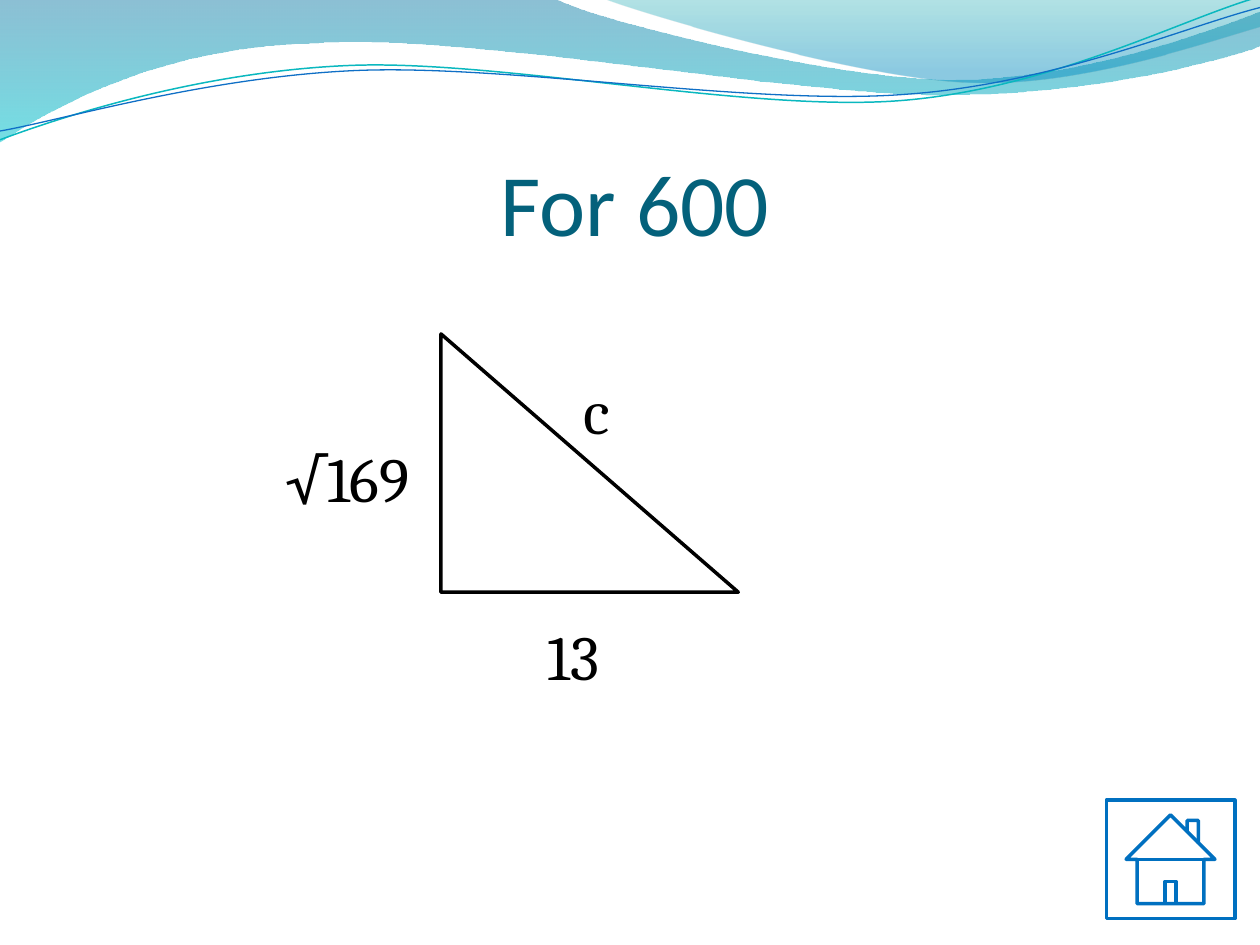
from dataclasses import dataclass
from math import cos, radians, sin

from pptx import Presentation
from pptx.dml.color import RGBColor
from pptx.enum.shapes import MSO_SHAPE as Preset
from pptx.enum.text import MSO_ANCHOR as Anchor, MSO_AUTO_SIZE as AutoSize, PP_ALIGN as Align
from pptx.oxml.ns import qn
from pptx.oxml.xmlchemy import OxmlElement
from pptx.util import Inches, Pt

UNITS_PER_INCH = 10000
STRAND_TILT = 2.7

Point = tuple[float, float]
Segment = tuple[float, ...]


@dataclass
class Stop:
    position: float
    color: str
    opacity: int


@dataclass
class Wave:
    start: Point
    segments: list[Segment]
    stops: tuple[Stop, Stop]


@dataclass
class Strand:
    start: Point
    segments: list[Segment]
    center: Point
    color: str
    width: float


@dataclass
class Outline:
    preset: Preset
    left: float
    top: float
    width: float
    height: float
    color: str


@dataclass
class Label:
    text: str
    left: float
    top: float
    width: float


WAVES = [
    Wave((0, 0), [
        (4.4, -0.01),
        (4.76, 0.17, 6.64, 0.63, 7.58, 0.63),
        (8.53, 0.63, 9.58, 0.26, 10, 0.09),
        (10.01, 0.36),
        (9.83, 0.44, 8.7, 0.76, 7.46, 0.75),
        (6.22, 0.75, 3.82, 0.28, 2.57, 0.34),
        (1.29, 0.36, 0.46, 0.83, -0.01, 1.13),
        (0, 0),
    ], (Stop(0, "0074A1", 45), Stop(1, "00C6CF", 55))),
    Wave((4.79, -0.01), [
        (5.09, 0.11, 6.82, 0.62, 7.69, 0.65),
        (8.56, 0.69, 9.61, 0.32, 10, 0.21),
        (10, 0),
        (4.79, -0.01),
    ], (Stop(0, "00A1A9", 30), Stop(0.8, "008BBF", 45))),
]

STRANDS = [
    Strand((0, 1.11), [
        (0.48, 0.93, 1.58, 0.57, 2.77, 0.52),
        (3.95, 0.47, 5.93, 0.89, 7.13, 0.8),
        (8.33, 0.71, 9.38, 0.15, 9.98, -0.02),
    ], (4.99, 0.575), "0AB8BF", 0.85),
    Strand((0, 1.04), [
        (0.47, 0.96, 1.64, 0.61, 2.83, 0.56),
        (4.03, 0.51, 5.97, 0.84, 7.17, 0.75),
        (8.36, 0.67, 9.41, 0.21, 10, 0.06),
    ], (5, 0.59), "0F6FC6", 0.75),
]

OUTLINES = [
    Outline(Preset.ACTION_BUTTON_HOME, 8.78, 6.35, 1.02, 0.94, "0070C0"),
    Outline(Preset.RIGHT_TRIANGLE, 3.5, 2.65, 2.36, 2.05, "000000"),
]

LABELS = [
    Label("√169", 2.17, 3.44, 1.5),
    Label("13", 4.25, 4.85, 0.87),
    Label("c", 4.53, 2.9, 0.87),
]


def rgb(color: str) -> RGBColor:
    return RGBColor.from_string(color)


def pairs(segment: Segment) -> list[Point]:
    return list(zip(segment[::2], segment[1::2]))


def turn(point: Point, center: Point, degrees: float) -> Point:
    angle = radians(degrees)
    x, y = point[0] - center[0], point[1] - center[1]
    return (center[0] + x * cos(angle) - y * sin(angle),
            center[1] + x * sin(angle) + y * cos(angle))


def draw_path(shapes, start: Point, segments: list[Segment], close: bool,
              center: Point = (0, 0), tilt: float = 0):
    points = [start] + [point for segment in segments for point in pairs(segment)]
    scaled = [tuple(value * UNITS_PER_INCH for value in turn(point, center, tilt))
              for point in points]
    builder = shapes.build_freeform(*scaled[0], scale=Inches(1) / UNITS_PER_INCH)
    builder.add_line_segments(scaled[1:], close=close)
    shape = builder.convert_to_shape()
    shape.shadow.inherit = False
    shape.rotation = -tilt
    lines = iter(list(shape.element.spPr.iter(qn("a:lnTo"))))
    for segment in segments:
        members = [next(lines) for _ in pairs(segment)]
        if len(members) == 3:
            curve = OxmlElement("a:cubicBezTo")
            members[0].addprevious(curve)
            for line in members:
                curve.append(line[0])
                line.getparent().remove(line)
    return shape


def set_outline(shape, color: str, width: float) -> None:
    shape.fill.background()
    shape.line.color.rgb = rgb(color)
    shape.line.width = Pt(width)


def draw_wave(shapes, wave: Wave) -> None:
    shape = draw_path(shapes, wave.start, wave.segments, True)
    shape.line.fill.background()
    shape.fill.gradient()
    shape.fill.gradient_angle = 270
    for gradient_stop, stop in zip(shape.fill.gradient_stops, wave.stops):
        gradient_stop.position = stop.position
        gradient_stop.color.rgb = rgb(stop.color)
    for element, stop in zip(shape.element.spPr.iter(qn("a:srgbClr")), wave.stops):
        alpha = OxmlElement("a:alpha")
        alpha.set("val", str(stop.opacity * 1000))
        element.append(alpha)


def draw_strand(shapes, strand: Strand) -> None:
    shape = draw_path(shapes, strand.start, strand.segments, False, strand.center, STRAND_TILT)
    set_outline(shape, strand.color, strand.width)


def draw_outline(shapes, outline: Outline) -> None:
    shape = shapes.add_shape(
        outline.preset, Inches(outline.left), Inches(outline.top),
        Inches(outline.width), Inches(outline.height),
    )
    shape.shadow.inherit = False
    set_outline(shape, outline.color, 2)


def add_run(paragraph, text: str, font: str, size: float, color: str) -> None:
    run = paragraph.add_run()
    run.text = text
    run.font.name = font
    run.font.size = Pt(size)
    run.font.color.rgb = rgb(color)


def draw_label(shapes, label: Label) -> None:
    shape = shapes.add_textbox(
        Inches(label.left), Inches(label.top), Inches(label.width), Inches(0.71)
    )
    frame = shape.text_frame
    frame.word_wrap = True
    frame.auto_size = AutoSize.SHAPE_TO_FIT_TEXT
    add_run(frame.paragraphs[0], label.text, "Cambria", 36, "000000")


def set_title(title, text: str) -> None:
    title.left, title.top = Inches(0.5), Inches(0.77)
    title.width, title.height = Inches(9.08), Inches(1.25)
    frame = title.text_frame
    frame.vertical_anchor = Anchor.BOTTOM
    frame.margin_left = frame.margin_right = frame.margin_bottom = 0
    frame.margin_top = Inches(0.05)
    paragraph = frame.paragraphs[0]
    paragraph.alignment = Align.CENTER
    add_run(paragraph, text, "Calibri", 50, "04617B")


def main() -> None:
    presentation = Presentation()
    presentation.slide_width, presentation.slide_height = Inches(10), Inches(7.5)
    slide = presentation.slides.add_slide(presentation.slide_layouts[5])
    for wave in WAVES:
        draw_wave(slide.shapes, wave)
    strand_group = slide.shapes.add_group_shape()
    for strand in STRANDS:
        draw_strand(strand_group.shapes, strand)
    for outline in OUTLINES:
        draw_outline(slide.shapes, outline)
    for label in LABELS:
        draw_label(slide.shapes, label)
    set_title(slide.shapes.title, "For 600")
    presentation.save("out.pptx")


if __name__ == "__main__":
    main()
